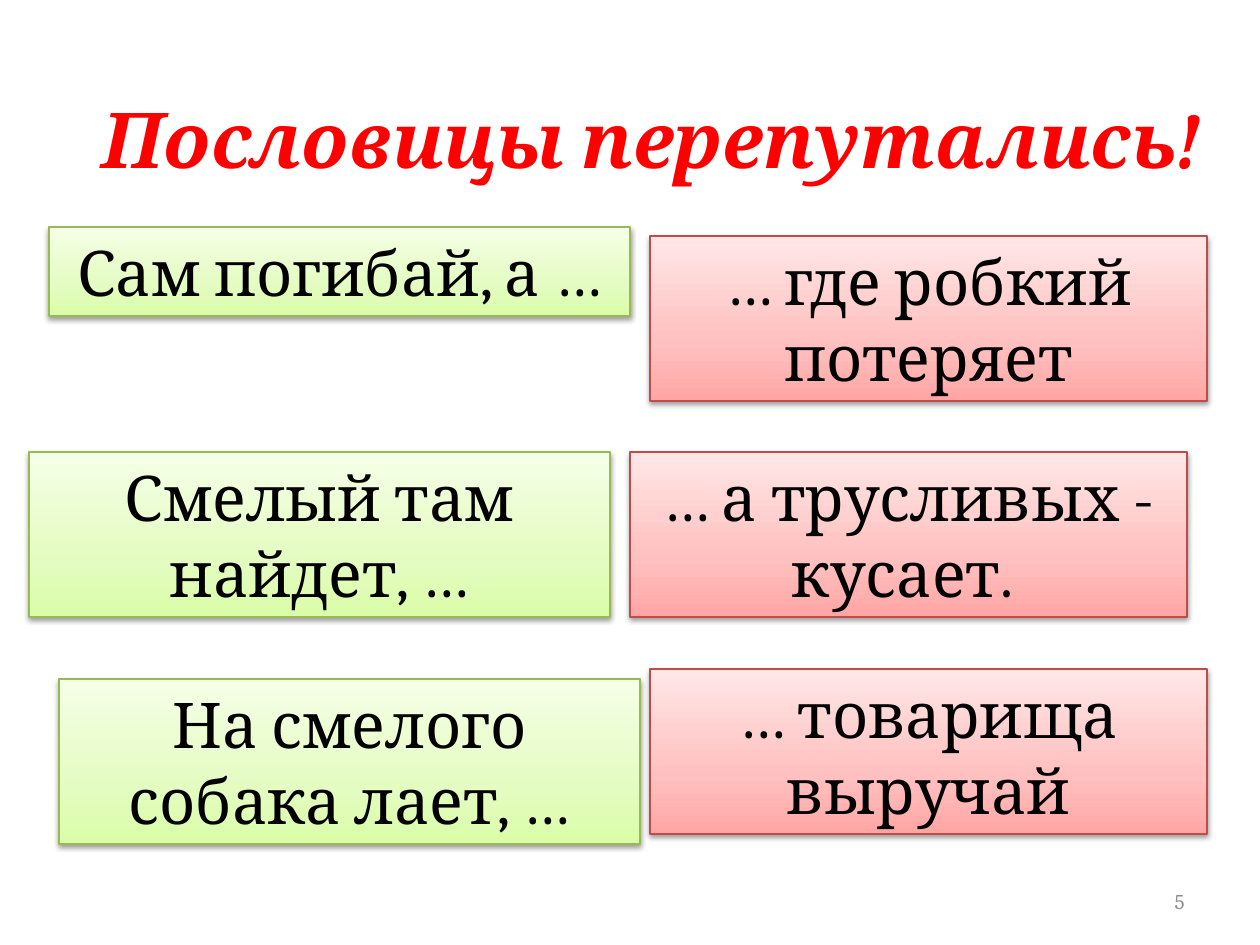
from dataclasses import dataclass

import pptx
import pptx.dml.color
import pptx.enum.shapes
import pptx.enum.text
import pptx.oxml
import pptx.oxml.ns
import pptx.util

PX = 914400 // 126  # EMU in one px
ALIGN = pptx.enum.text.PP_ALIGN
MIDDLE = pptx.enum.text.MSO_ANCHOR.MIDDLE


@dataclass(frozen=True)
class Palette:
    stops: tuple[tuple[int, str], ...]  # percent from the bottom edge, colour
    line: str


@dataclass(frozen=True)
class Theme:
    font: str = "Cambria"
    title_size: int = 44
    card_size: int = 36
    number_size: int = 12
    title: str = "FF0000"
    text: str = "000000"
    number: str = "8C8C8C"
    green: Palette = Palette(((0, "DAFDA7"), (35, "E4FCC2"), (100, "F5FFE7")), "98B955")
    red: Palette = Palette(((0, "FFA6A5"), (35, "FFC0BF"), (100, "FFE7E7")), "BF4C48")


@dataclass(frozen=True)
class Card:
    text: str
    left: int
    top: int
    width: int
    height: int
    palette: Palette


THEME = Theme()
BEGINNING, ENDING = 581, 557  # card widths
ONE_LINE, TWO_LINES = 89, 165  # card heights

CARDS = (
    Card("… товарища выручай", 650, 669, ENDING, TWO_LINES, THEME.red),
    Card("Сам погибай, а …", 49, 227, BEGINNING, ONE_LINE, THEME.green),
    Card("… где робкий потеряет", 650, 236, ENDING, TWO_LINES, THEME.red),
    Card("Смелый там найдет, …", 29, 452, BEGINNING, TWO_LINES, THEME.green),
    Card("… а трусливых - кусает. ", 630, 452, ENDING, TWO_LINES, THEME.red),
    Card("На смелого собака лает, …", 59, 679, BEGINNING, TWO_LINES, THEME.green),
)


def px(*lengths: int) -> list[pptx.util.Emu]:
    return [pptx.util.Emu(length * PX) for length in lengths]


def write(shape, text: str, *, size: int, color: str, align=ALIGN.CENTER,
          bold: bool = False, italic: bool = False) -> None:
    frame = shape.text_frame
    frame.word_wrap = True
    frame.vertical_anchor = MIDDLE
    para = frame.paragraphs[0]
    para.alignment = align
    span = para.add_run()
    span.text = text
    span.font.name = THEME.font
    span.font.size = pptx.util.Pt(size)
    span.font.bold = bold
    span.font.italic = italic
    span.font.color.rgb = pptx.dml.color.RGBColor.from_string(color)


def paint(shape, palette: Palette) -> None:
    """Give the shape its upward gradient, thin outline and soft shadow."""
    namespace = pptx.oxml.ns.nsdecls("a")
    stops = "".join(
        f'<a:gs pos="{percent * 1000}"><a:srgbClr val="{color}"/></a:gs>'
        for percent, color in palette.stops)
    properties = shape.element.spPr
    properties.append(pptx.oxml.parse_xml(
        f'<a:gradFill {namespace} rotWithShape="1"><a:gsLst>{stops}</a:gsLst>'
        '<a:lin ang="16200000" scaled="1"/></a:gradFill>'))
    shape.line.color.rgb = pptx.dml.color.RGBColor.from_string(palette.line)
    shape.line.width = pptx.util.Pt(0.75)
    properties.append(pptx.oxml.parse_xml(
        f'<a:effectLst {namespace}>'
        '<a:outerShdw blurRad="40000" dist="20000" dir="5400000" rotWithShape="0">'
        '<a:srgbClr val="000000"><a:alpha val="38000"/></a:srgbClr>'
        '</a:outerShdw></a:effectLst>'))


def draw_card(page, card: Card) -> None:
    box = page.shapes.add_shape(
        pptx.enum.shapes.MSO_SHAPE.RECTANGLE,
        *px(card.left, card.top, card.width, card.height))
    paint(box, card.palette)
    write(box, card.text, size=THEME.card_size, color=THEME.text)


def main() -> None:
    deck = pptx.Presentation()
    deck.slide_width, deck.slide_height = px(1260, 945)
    page = deck.slides.add_slide(deck.slide_layouts[5])

    # Title
    title = page.shapes.title
    title.left, title.top, title.width, title.height = px(84, 59, 1134, 158)
    write(title, "Пословицы перепутались!", size=THEME.title_size,
          color=THEME.title, bold=True, italic=True)

    # Mixed-up halves of the proverbs
    for card in CARDS:
        draw_card(page, card)

    # Page number
    number = page.shapes.add_textbox(*px(903, 876, 294, 50))
    write(number, "5", size=THEME.number_size, color=THEME.number, align=ALIGN.RIGHT)

    deck.save("out.pptx")


if __name__ == "__main__":
    main()
